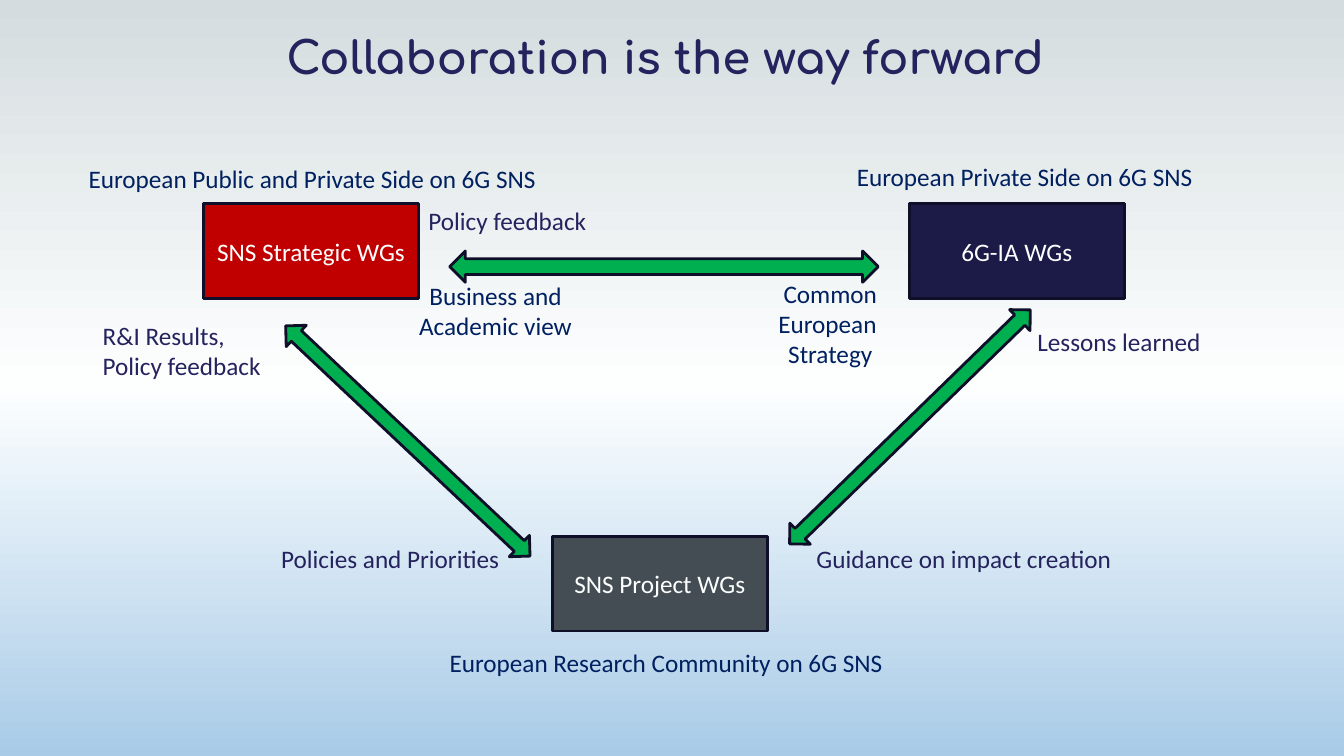
from copy import deepcopy

from pptx import Presentation
from pptx import util as u
from pptx.dml.color import RGBColor
from pptx.enum import shapes, text
from pptx.oxml import parse_xml
from pptx.oxml.ns import nsdecls, qn

PX = 9144
WIDE, HIGH = 1333, 750
NAVY, INDIGO, EDGE, WHITE, GREEN = "002060", "25235E", "100F29", "FDFFFF", "00B050"
LEFT, MID = text.PP_ALIGN.LEFT, text.PP_ALIGN.CENTER


def color(code):
    """Turn a hex string into a colour."""
    return RGBColor.from_string(code)


def scale(box):
    """Turn a box in px into EMU."""
    return [u.Emu(v * PX) for v in box]


def write(frame, lines, hue, align=LEFT, size=18, font="Calibri"):
    """Write each line as a paragraph with one run."""
    for i, line in enumerate(lines):
        para = frame.add_paragraph() if i else frame.paragraphs[0]
        para.alignment = align
        run = para.add_run()
        run.text = line
        run.font.size = u.Pt(size)
        run.font.name = font
        run.font.color.rgb = color(hue)
    return run


def paint(slide, stops):
    """Fill the background with a gradient running from top to bottom."""
    fill = slide.background.fill
    fill.gradient()
    fill.gradient_angle = 270
    first = slide.element.find(".//" + qn("a:gs"))
    first.addnext(deepcopy(first))
    for stop, (place, hue) in zip(fill.gradient_stops, stops):
        stop.position = place
        stop.color.rgb = color(hue)


def title(slide, box, words):
    """Place the outlined title in the middle of its box."""
    frame = slide.shapes.add_textbox(*scale(box)).text_frame
    frame.word_wrap = True
    frame.vertical_anchor = text.MSO_ANCHOR.MIDDLE
    run = write(frame, [words], INDIGO, MID, 32, "Comfortaa")
    run.font.bold = True
    line = (f'<a:ln {nsdecls("a")} w="9525"><a:solidFill>'
            f'<a:srgbClr val="{INDIGO}"/></a:solidFill></a:ln>')
    run.font.fill
    run._r.get_or_add_rPr().insert(0, parse_xml(line))


def solid(slide, kind, box, hue):
    """Place a filled shape with a dark edge."""
    shape = slide.shapes.add_shape(kind, *scale(box))
    shape.shadow.inherit = False
    shape.fill.solid()
    shape.fill.fore_color.rgb = color(hue)
    shape.line.color.rgb = color(EDGE)
    shape.line.width = u.Pt(2)
    return shape


def group(slide, box, name, hue):
    """Place the box of one working group with its name."""
    frame = solid(slide, shapes.MSO_SHAPE.RECTANGLE, box, hue).text_frame
    frame.word_wrap = True
    frame.vertical_anchor = text.MSO_ANCHOR.MIDDLE
    write(frame, [name], WHITE, MID)


def arrow(slide, box, turn=0):
    """Place a two-way arrow, turned by some degrees."""
    solid(slide, shapes.MSO_SHAPE.LEFT_RIGHT_ARROW, box, GREEN).rotation = turn


def label(slide, box, lines, hue, wrap=False, align=LEFT):
    """Place a plain label."""
    frame = slide.shapes.add_textbox(*scale(box)).text_frame
    frame.word_wrap = wrap
    frame.auto_size = text.MSO_AUTO_SIZE.SHAPE_TO_FIT_TEXT
    write(frame, lines, hue, align)


def diagram(slide, box):
    """Place the triangle of groups, arrows and labels in its box."""
    x, y, _, _ = box

    def at(dx, dy, w, h):
        """Shift a part into the box."""
        return x + dx, y + dy, w, h

    for dx, dy, name, hue in (
        (124, 47, "SNS Strategic WGs", "C00000"),
        (470, 377, "SNS Project WGs", "444D53"),
        (824, 47, "6G-IA WGs", "1C1A46"),
    ):
        group(slide, at(dx, dy, 213, 94), name, hue)

    arrow(slide, at(368, 94, 425, 31))
    arrow(slide, at(658, 254, 333, 29), 315.8)
    arrow(slide, at(160, 268, 333, 29), 43.3)

    for dx, dy, w, words, hue in (
        (0, 2, 475, "European Public and Private Side on 6G SNS", NAVY),
        (762, 0, 363, "European Private Side on 6G SNS", NAVY),
        (358, 482, 461, "European Research Community on 6G SNS", NAVY),
        (191, 379, 239, "Policies and Priorities", INDIGO),
        (722, 379, 316, "Guidance on impact creation", INDIGO),
        (941, 164, 184, "Lessons learned", INDIGO),
    ):
        label(slide, at(dx, dy, w, 40), [words], hue)

    for dx, dy, w, h, lines, hue, align in (
        (14, 158, 181, 71, ["R&I Results, Policy feedback"], INDIGO, LEFT),
        (657, 116, 177, 101, ["Common European ", "Strategy"], NAVY, MID),
        (325, 118, 177, 71, ["Business and Academic view"], NAVY, MID),
        (337, 44, 181, 40, ["Policy feedback"], INDIGO, LEFT),
    ):
        label(slide, at(dx, dy, w, h), lines, hue, True, align)


def main():
    """Build the slide and save it."""
    deck = Presentation()
    deck.slide_width, deck.slide_height = scale((WIDE, HIGH))
    slide = deck.slides.add_slide(deck.slide_layouts[6])
    paint(slide, ((0, "D5DCDF"), (0.51, "FDFFFF"), (1, "A9CBE7")))
    title(slide, (0, 21, WIDE, 71), "Collaboration is the way forward ")
    diagram(slide, (78, 155, 1125, 522))
    deck.save("out.pptx")


if __name__ == "__main__":
    main()
